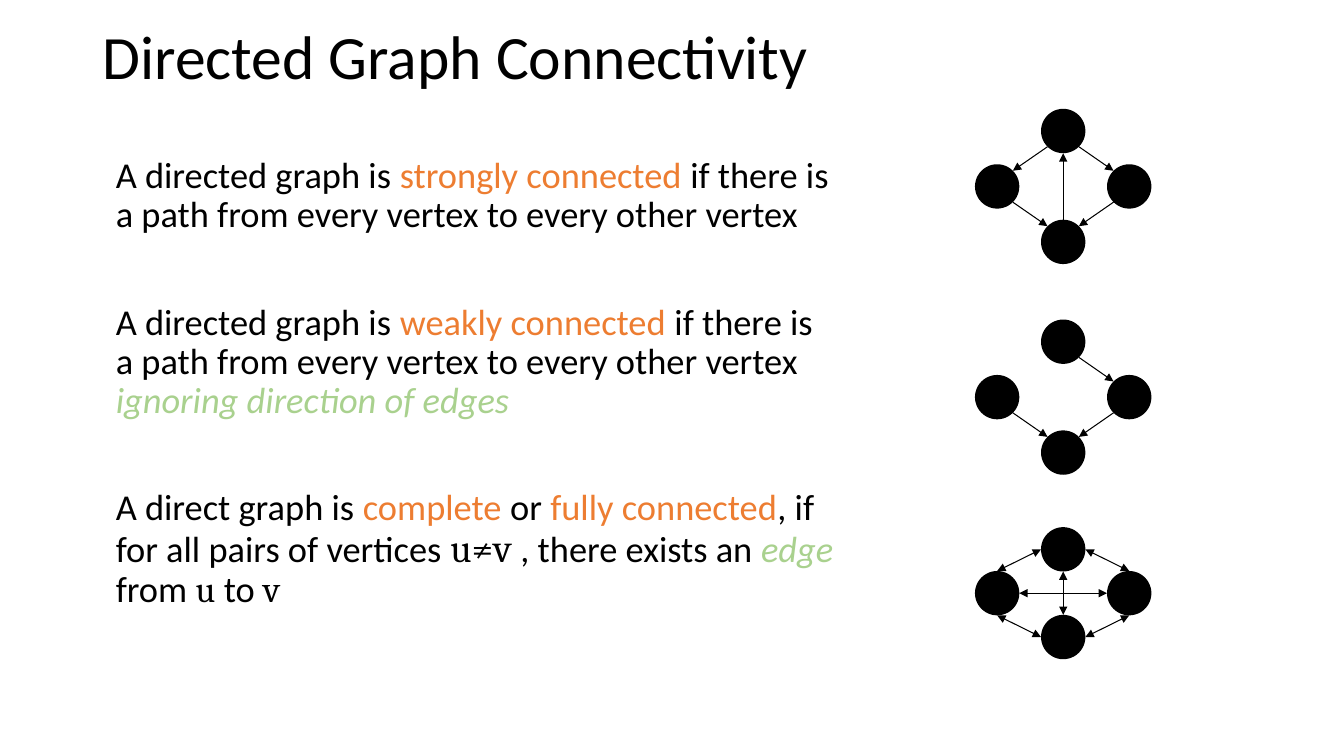
from math import sqrt

from lxml import etree
from pptx import Presentation
from pptx.dml.color import RGBColor
from pptx.enum.shapes import MSO_CONNECTOR, MSO_SHAPE
from pptx.enum.text import MSO_ANCHOR
from pptx.oxml.ns import qn
from pptx.util import Inches, Pt

OVAL = MSO_SHAPE.OVAL
STRAIGHT = MSO_CONNECTOR.STRAIGHT
TOP, MIDDLE = MSO_ANCHOR.TOP, MSO_ANCHOR.MIDDLE

BLACK, ORANGE, GREEN = "000000", "ED7D31", "A9D18E"
NODE = 0.44
DIAGONAL = sqrt(0.5)
SITES = {"n": (0, -1), "e": (1, 0), "s": (0, 1), "w": (-1, 0)}
SITES |= {
    v + h: (SITES[h][0] * DIAGONAL, SITES[v][1] * DIAGONAL)
    for v in "ns" for h in "ew"
}

PLAIN = {}
TERM = {"color": ORANGE}
STRESS = {"color": GREEN, "italic": True}
MATH = {"font": "Cambria"}

DEFINITIONS = [
    [("A directed graph is ", PLAIN), ("strongly connected", TERM),
     (" if there is a path from every vertex to every other vertex", PLAIN)],
    [("A directed graph is ", PLAIN), ("weakly connected", TERM),
     (" if there is a path from every vertex to every other vertex ", PLAIN),
     ("ignoring direction of edges", STRESS)],
    [("A direct graph is ", PLAIN), ("complete", TERM), (" or ", PLAIN),
     ("fully connected", TERM), (", if for all pairs of vertices ", PLAIN),
     ("u≠v ", {"font": "Cambria", "size": 28}), (", there exists an ", PLAIN),
     ("edge", STRESS), (" from ", PLAIN), ("u", MATH), (" to ", PLAIN), ("v", MATH)],
]

WEAK_EDGES = ["top se right nw", "right sw bottom ne", "left se bottom nw"]
STRONG_EDGES = ["top sw left ne", *WEAK_EDGES, "bottom n top s"]
COMPLETE_EDGES = [
    "bottom n top s", "left e right w", "top w left n",
    "top e right n", "right s bottom e", "bottom w left s",
]
GRAPHS = [
    ((9.67, 1.08, 1.75, 1.54), STRONG_EDGES, False),
    ((9.67, 3.17, 1.75, 1.54), WEAK_EDGES, False),
    ((9.67, 5.23, 1.75, 1.31), COMPLETE_EDGES, True),
]


def rgb(value):
    """Turn a hex string into a colour."""
    return RGBColor.from_string(value)


def add_text(s, box, paragraphs, size, anchor=TOP, gap=0):
    """Place paragraphs of styled runs in a box, with a gap between them."""
    tf = s.shapes.add_textbox(*map(Inches, box)).text_frame
    tf.word_wrap = True
    tf.vertical_anchor = anchor
    for i, runs in enumerate(paragraphs):
        p = tf.add_paragraph() if i else tf.paragraphs[0]
        p.line_spacing = 0.9
        p.space_before = Pt(gap if i else 0)
        for text, style in runs:
            r = p.add_run()
            r.text = text
            r.font.name = style.get("font", "Calibri")
            r.font.size = Pt(style.get("size", size))
            r.font.color.rgb = rgb(style.get("color", BLACK))
            r.font.italic = style.get("italic", False)


def add_edge(group, start, end, two_way):
    """Draw an arrow between two points, with heads at one or both ends."""
    c = group.shapes.add_connector(STRAIGHT, *map(Inches, (*start, *end)))
    c.line.color.rgb = rgb(BLACK)
    c.line.width = Pt(0.75)
    ln = c.line._get_or_add_ln()
    for tag in ("a:headEnd", "a:tailEnd") if two_way else ("a:tailEnd",):
        etree.SubElement(ln, qn(tag), type="triangle")
    etree.SubElement(c._element.spPr, qn("a:effectLst"))


def add_graph(s, box, edges, two_way):
    """Draw four vertices at the middles of a box's sides and join them."""
    x, y, w, h = box
    radius = NODE / 2
    cx, cy = x + w / 2, y + h / 2
    centres = {
        "top": (cx, y + radius), "bottom": (cx, y + h - radius),
        "right": (x + w - radius, cy), "left": (x + radius, cy),
    }
    group = s.shapes.add_group_shape()
    for nx, ny in centres.values():
        node = group.shapes.add_shape(
            OVAL, *map(Inches, (nx - radius, ny - radius, NODE, NODE)))
        node.shadow.inherit = False
        node.fill.solid()
        node.fill.fore_color.rgb = rgb(BLACK)
        node.line.fill.background()

    def rim(vertex, site):
        """Find the point on a vertex's rim that faces a direction."""
        return [c + radius * d for c, d in zip(centres[vertex], SITES[site])]

    for edge in edges:
        source, leave, target, arrive = edge.split()
        add_edge(group, rim(source, leave), rim(target, arrive), two_way)


def main():
    """Build the slide and save it."""
    prs = Presentation()
    prs.slide_width, prs.slide_height = Inches(13.33), Inches(7.5)
    s = prs.slides.add_slide(prs.slide_layouts[6])
    title = [[("Directed Graph Connectivity", PLAIN)]]
    add_text(s, (0.92, 0.19, 11.5, 0.81), title, 44, MIDDLE)
    add_text(s, (1.05, 1.51, 7.33, 5.9), DEFINITIONS, 26, gap=48.5)
    for box, edges, two_way in GRAPHS:
        add_graph(s, box, edges, two_way)
    prs.save("out.pptx")


if __name__ == "__main__":
    main()
